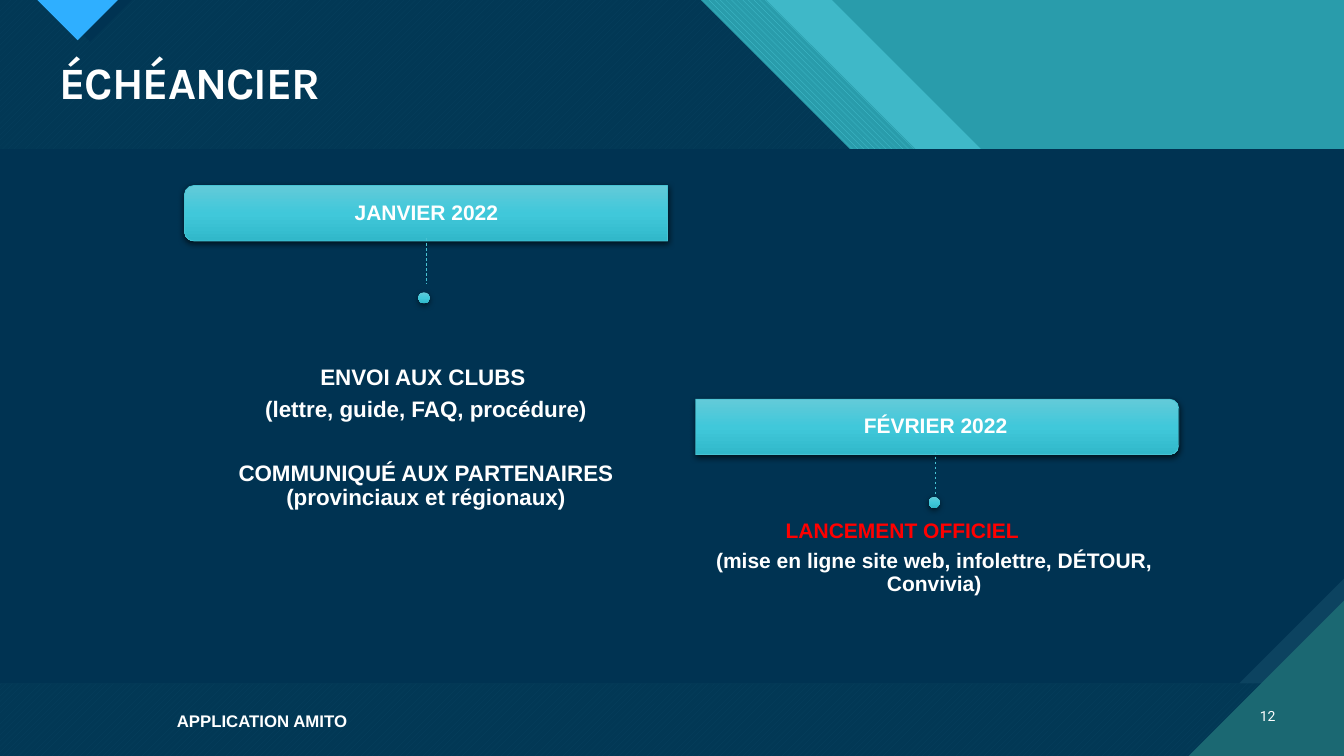
from lxml import etree
from pptx import Presentation
from pptx import util as u
from pptx.dml.color import RGBColor
from pptx.enum import dml, shapes, text
from pptx.oxml import parse_xml
from pptx.oxml.ns import nsdecls, qn

WHITE = RGBColor(0xFF, 0xFF, 0xFF)
RED = RGBColor(0xFF, 0x00, 0x00)
NAVY = RGBColor(0x00, 0x33, 0x52)
SLATE = RGBColor(0x0C, 0x43, 0x60)
PINE = RGBColor(0x1B, 0x68, 0x72)
TEAL = RGBColor(0x29, 0x9C, 0xAB)
AQUA = RGBColor(0x47, 0xC3, 0xD3)
BLUE = RGBColor(0x2F, 0xAF, 0xFF)
GLOSS = ((0, "63CAD9"), (50, "40C8DA"), (100, "31B8CA"))

WIDTH, HEIGHT = 13.33, 7.5
BODY_TOP, BODY_BOTTOM = 1.48, 6.78
BAR_W, BAR_H, DOT = 4.79, 0.55, 0.11

deck = Presentation()
deck.slide_width, deck.slide_height = u.Inches(WIDTH), u.Inches(HEIGHT)
slide = deck.slides.add_slide(deck.slide_layouts[5])
slide.background.fill.solid()
slide.background.fill.fore_color.rgb = TEAL


def polygon(points, color, back=None, pattern=None, alpha=None):
    """Closed outline in inches, with a solid, see-through or patterned fill."""
    corners = [(u.Inches(x), u.Inches(y)) for x, y in points]
    outline = slide.shapes.build_freeform(*corners[0])
    outline.add_line_segments(corners[1:])
    area = outline.convert_to_shape()
    area.shadow.inherit = False
    area.line.fill.background()
    if pattern:
        area.fill.patterned()
        area.fill.pattern = pattern
        area.fill.back_color.rgb = back
    else:
        area.fill.solid()
    area.fill.fore_color.rgb = color
    if alpha:
        tint = area._element.spPr.find(".//" + qn("a:srgbClr"))
        etree.SubElement(tint, qn("a:alpha")).set("val", str(alpha * 1000))


def caption(at, lines, size, color=WHITE, font="Arial", bold=True, inset=0.0,
            align=text.PP_ALIGN.CENTER, anchor=text.MSO_ANCHOR.MIDDLE):
    """Text box whose lines are (wording, points before) pairs."""
    box = slide.shapes.add_textbox(*map(u.Inches, at))
    frame = box.text_frame
    frame.word_wrap = True
    frame.vertical_anchor = anchor
    frame.margin_left = frame.margin_right = u.Inches(inset)
    frame.margin_top = frame.margin_bottom = 0
    for number, (wording, before) in enumerate(lines):
        line = frame.paragraphs[0] if number == 0 else frame.add_paragraph()
        line.text = wording
        line.alignment, line.line_spacing = align, 0.9
        line.space_before = u.Pt(before)
        line.font.name, line.font.size, line.font.bold = font, u.Pt(size), bold
        line.font.color.rgb = color
    return box


# Header bands: each one ends in the same 45° diagonal
down, up = dml.MSO_PATTERN.WIDE_DOWNWARD_DIAGONAL, dml.MSO_PATTERN.WIDE_UPWARD_DIAGONAL
for edge, fill in (
    (8.25, dict(color=AQUA, alpha=74)),
    (7.6, dict(color=AQUA, back=TEAL, pattern=down)),
    (6.95, dict(color=AQUA, back=PINE, pattern=up)),
    (6.95, dict(color=NAVY, alpha=90)),
):
    polygon([(0, 0), (edge, 0), (WIDTH, WIDTH - edge), (WIDTH, HEIGHT), (0, HEIGHT)], **fill)

for left, right, color in ((0.48, 1.31, NAVY), (0.37, 1.17, BLUE)):
    polygon([(left, 0), (right, 0), ((left + right) / 2, (right - left) / 2)], color)

# Body with its cut corner
for cut, color in ((0, SLATE), (1.04, NAVY)):
    polygon([(0, BODY_TOP), (WIDTH, BODY_TOP), (WIDTH, BODY_BOTTOM - cut),
             (WIDTH - cut, BODY_BOTTOM), (0, BODY_BOTTOM)], color)
polygon([(WIDTH - 1.54, HEIGHT), (WIDTH, HEIGHT), (WIDTH, HEIGHT - 1.54)], PINE)

title = slide.shapes.title
slide.shapes._spTree.append(title._element)  # in front of the header bands
title.left, title.top, title.width, title.height = map(u.Inches, (0.49, 0.55, 12.26, 0.59))
title.text_frame.text = "ÉCHÉANCIER"
title.text_frame.vertical_anchor = text.MSO_ANCHOR.MIDDLE
heading = title.text_frame.paragraphs[0]
heading.alignment, heading.line_spacing = text.PP_ALIGN.LEFT, 0.9
heading.font.name, heading.font.size, heading.font.bold = "Karla", u.Pt(32), True
heading.font.color.rgb = WHITE
heading.runs[0]._r.get_or_add_rPr().set("spc", "-70")

# Timeline: month, bar corner, label left, turn of the bar, line end, dot corner
for month, bar_left, bar_top, label_left, turn, line_end, dot_left, dot_top in (
    ("JANVIER 2022", 1.83, 1.84, 1.85, 270, 2.82, 4.15, 2.9),
    ("FÉVRIER 2022", 6.9, 3.96, 6.9, 90, 4.93, 9.21, 4.93),
):
    shift = (BAR_W - BAR_H) / 2
    bar = slide.shapes.add_shape(
        shapes.MSO_SHAPE.ROUND_2_SAME_RECTANGLE,
        *map(u.Inches, (bar_left + shift, bar_top - shift, BAR_H, BAR_W)))
    bar.rotation = turn
    bar.line.color.rgb, bar.line.width = AQUA, u.Pt(0.5)
    label = caption((label_left, bar_top + 0.03, 4.76, 0.49), [(month, 0)], 15, inset=0.12)

    stem = slide.shapes.add_connector(shapes.MSO_CONNECTOR.STRAIGHT, 0, 0, 0, 0)
    stem.begin_connect(label, 2)
    stem.end_x, stem.end_y = stem.begin_x, u.Inches(line_end)
    stem.line.color.rgb, stem.line.width = AQUA, u.Pt(0.5)
    stem.line.dash_style = dml.MSO_LINE.DASH
    etree.SubElement(stem._element.spPr, qn("a:effectLst"))

    dot = slide.shapes.add_shape(
        shapes.MSO_SHAPE.OVAL, *map(u.Inches, (dot_left, dot_top, DOT, DOT)))
    dot.line.fill.background()

    for glossy in (bar, dot):
        glossy.fill.gradient()
        glossy.fill.gradient_angle = 270
        properties = glossy._element.spPr
        gradient = properties.find(qn("a:gradFill"))
        gradient.set("rotWithShape", "0")
        stops = gradient.find(qn("a:gsLst"))
        stops[:] = [parse_xml(
            f'<a:gs {nsdecls("a")} pos="{share * 1000}"><a:srgbClr val="{tone}"/></a:gs>')
            for share, tone in GLOSS]
        properties.append(parse_xml(
            f'<a:effectLst {nsdecls("a")}><a:outerShdw blurRad="57150" dist="19050" '
            'dir="5400000" algn="ctr" rotWithShape="0"><a:srgbClr val="000000">'
            '<a:alpha val="63000"/></a:srgbClr></a:outerShdw></a:effectLst>'))

caption((1.83, 2.37, BAR_W, 2.69),
        [("ENVOI AUX CLUBS ", 0), ("(lettre, guide, FAQ, procédure)", 5.6),
         ("COMMUNIQUÉ AUX PARTENAIRES (provinciaux et régionaux)", 28)],
        16, anchor=text.MSO_ANCHOR.BOTTOM)
caption((6.88, 5.16, 4.14, 0.25), [("LANCEMENT OFFICIEL", 0)], 15, RED,
        anchor=text.MSO_ANCHOR.TOP)
caption((6.87, 5.46, BAR_W, 0.5),
        [("(mise en ligne site web, infolettre, DÉTOUR, Convivia)", 0)], 15,
        anchor=text.MSO_ANCHOR.TOP)

caption((0.35, 6.96, 4.5, 0.4), [("APPLICATION AMITO", 0)], 12, inset=0.1)
caption((12.31, 6.91, 0.44, 0.4), [("12", 0)], 10, font="Roboto", bold=False,
        inset=0.1, align=text.PP_ALIGN.RIGHT)

deck.save("out.pptx")
